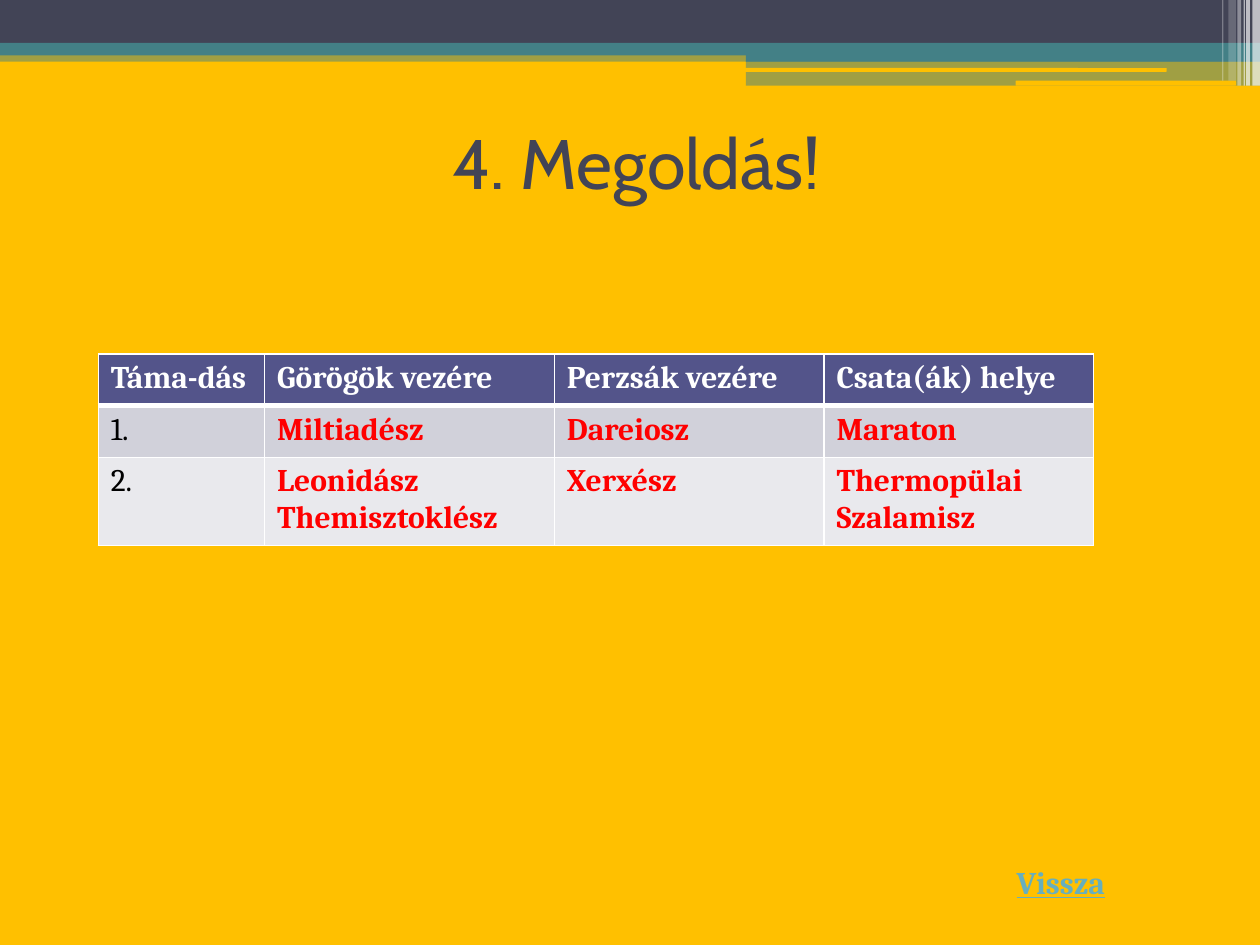
from lxml import etree
from pptx import Presentation
from pptx.dml.color import RGBColor
from pptx.enum.shapes import MSO_SHAPE
from pptx.enum.text import MSO_ANCHOR, MSO_AUTO_SIZE, PP_ALIGN
from pptx.oxml.ns import qn
from pptx.util import Inches, Pt

RECTANGLE, ROUNDED = MSO_SHAPE.RECTANGLE, MSO_SHAPE.ROUNDED_RECTANGLE
MIDDLE, CENTER = MSO_ANCHOR.MIDDLE, PP_ALIGN.CENTER
FIT_SHAPE = MSO_AUTO_SIZE.SHAPE_TO_FIT_TEXT

GOLD = RGBColor(0xFF, 0xC0, 0x00)
SLATE = RGBColor(0x42, 0x44, 0x56)
TEAL = RGBColor(0x43, 0x80, 0x86)
WHITE = RGBColor(0xFF, 0xFF, 0xFF)
BLACK = RGBColor(0x00, 0x00, 0x00)
RED = RGBColor(0xFF, 0x00, 0x00)
LINK_BLUE = RGBColor(0x67, 0xAF, 0xBD)
INDIGO = RGBColor(0x53, 0x54, 0x8A)
ROW_FILLS = (RGBColor(0xD1, 0xD1, 0xDA), RGBColor(0xE9, 0xE9, 0xED))

HEADING_FONT, BODY_FONT = "Cabin", "Cambria"
SLIDE_WIDTH, SLIDE_HEIGHT = Inches(10), Inches(7.5)
COLUMN, ROW = SLIDE_WIDTH // 100, SLIDE_HEIGHT // 75

BANDS = (
    (RECTANGLE, 0, 4, 100, 0.9, TEAL, 50),
    (RECTANGLE, 0, 0, 100, 3.4, SLATE, 100),
    (RECTANGLE, 0, 3.4, 100, 1, TEAL, 100),
    (RECTANGLE, 59.2, 3.9, 40.8, 1, TEAL, 100),
    (RECTANGLE, 59.2, 4.8, 40.8, 2, TEAL, 50),
    (ROUNDED, 59.1, 5.4, 33.5, 0.3, GOLD, 100),
    (ROUNDED, 80.6, 6.4, 17.5, 0.4, GOLD, 100),
)
STRIPES = (
    (99.4, 0.6, 6.8, 65),
    (98.9, 0.3, 6.8, 65),
    (98.7, 0.1, 6.8, 60),
    (98.2, 0.3, 6.8, 40),
    (97.5, 0.6, 6.4, 20),
    (97, 0.1, 6.4, 30),
)
BATTLES = (
    ("Táma-dás", "Görögök vezére", "Perzsák vezére", "Csata(ák) helye"),
    ("1.", "Miltiadész", "Dareiosz", "Maraton"),
    ("2.", "Leonidász\nThemisztoklész", "Xerxész", "Thermopülai\nSzalamisz"),
)
BATTLE_COLUMNS = (13.2, 23, 21.4, 21.4)
BATTLE_ROWS = (4.1, 4.1, 7)


def grid_box(left, top, width, height):
    """Turn grid columns and rows into slide lengths."""
    return (round(left * COLUMN), round(top * ROW),
            round(width * COLUMN), round(height * ROW))


def style_text(text_frame, font_name, size, color, bold=False, underline=False):
    """Format every run of a text frame."""
    for paragraph in text_frame.paragraphs:
        for run in paragraph.runs:
            font = run.font
            font.name, font.size = font_name, Pt(size)
            font.bold, font.underline = bold, underline
            font.color.rgb = color


def add_band(slide, outline, box, color, opacity):
    """Add one borderless band with the given opacity in percent."""
    band = slide.shapes.add_shape(outline, *box)
    band.shadow.inherit = False
    band.line.fill.background()
    band.fill.solid()
    band.fill.fore_color.rgb = color
    if opacity < 100:
        tint = band.fill._xPr.find(qn("a:solidFill"))[0]
        etree.SubElement(tint, qn("a:alpha"), val=str(opacity * 1000))


def add_header(slide, left, top):
    """Draw the header bands and the pale stripes at their right end."""
    stripes = tuple((RECTANGLE, x, 0, width, height, WHITE, opacity)
                    for x, width, height, opacity in STRIPES)
    for outline, x, y, width, height, color, opacity in BANDS + stripes:
        box = grid_box(left + x, top + y, width, height)
        add_band(slide, outline, box, color, opacity)


def add_heading(slide, box):
    """Fill and place the title placeholder."""
    heading = slide.shapes.title
    heading.left, heading.top, heading.width, heading.height = box
    frame = heading.text_frame
    frame.text = "4. Megoldás!"
    frame.vertical_anchor = MIDDLE
    frame.paragraphs[0].alignment = CENTER
    style_text(frame, HEADING_FONT, 40, SLATE)


def set_borders(cell, bottom_width):
    """Give a cell white borders with its own bottom width in points."""
    properties = cell._tc.get_or_add_tcPr()
    widths = {"a:lnL": 1, "a:lnR": 1, "a:lnT": 1, "a:lnB": bottom_width}
    for position, (side, width) in enumerate(widths.items()):
        border = etree.Element(qn(side), w=str(Pt(width)))
        fill = etree.SubElement(border, qn("a:solidFill"))
        etree.SubElement(fill, qn("a:srgbClr"), val=str(WHITE))
        properties.insert(position, border)


def add_battles(slide, box):
    """Add the table of attacks, leaders and battle sites."""
    frame = slide.shapes.add_table(len(BATTLES), len(BATTLE_COLUMNS), *box)
    battles = frame.table
    for column, width in zip(battles.columns, BATTLE_COLUMNS):
        column.width = round(width * COLUMN)
    for row, height in zip(battles.rows, BATTLE_ROWS):
        row.height = round(height * ROW)
    for r, entries in enumerate(BATTLES):
        for c, entry in enumerate(entries):
            cell = battles.cell(r, c)
            cell.text_frame.text = entry
            is_header, is_number = r == 0, r > 0 and c == 0
            color = WHITE if is_header else BLACK if is_number else RED
            style_text(cell.text_frame, BODY_FONT, 18, color, not is_number)
            cell.fill.solid()
            cell.fill.fore_color.rgb = INDIGO if is_header else ROW_FILLS[r - 1]
            set_borders(cell, 3 if is_header else 1)


def add_back_label(slide, box):
    """Add the underlined label in the lower right corner."""
    frame = slide.shapes.add_textbox(*box).text_frame
    frame.word_wrap = False
    frame.auto_size = FIT_SHAPE
    frame.text = "Vissza"
    style_text(frame, BODY_FONT, 18, LINK_BLUE, bold=True, underline=True)


def main():
    """Build and save the solution slide."""
    deck = Presentation()
    deck.slide_width, deck.slide_height = SLIDE_WIDTH, SLIDE_HEIGHT
    slide = deck.slides.add_slide(deck.slide_layouts.get_by_name("Title Only"))
    slide.background.fill.solid()
    slide.background.fill.fore_color.rgb = GOLD
    add_header(slide, 0, 0)
    add_heading(slide, grid_box(5.5, 7, 90, 11.7))
    add_back_label(slide, grid_box(79.7, 68, 10.3, 4))
    add_battles(slide, grid_box(7.8, 28.1, sum(BATTLE_COLUMNS), sum(BATTLE_ROWS)))
    deck.save("out.pptx")


if __name__ == "__main__":
    main()
